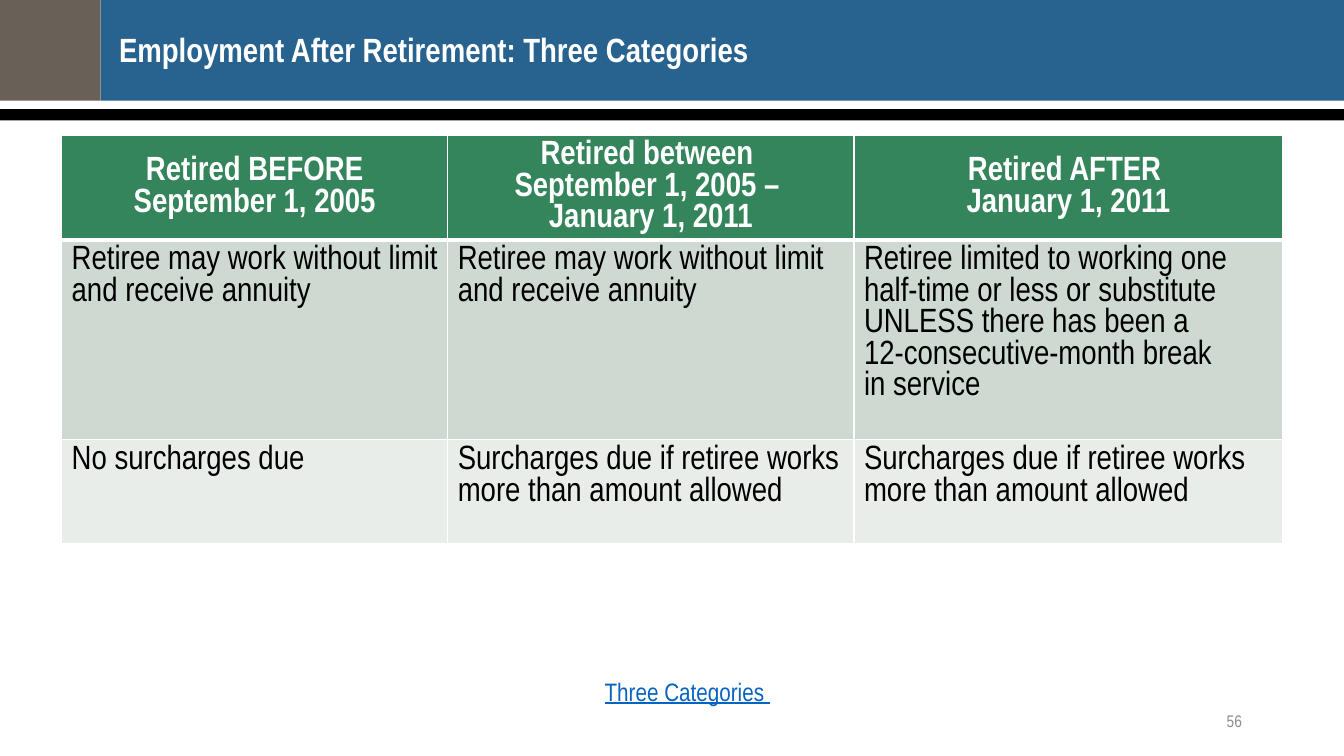
import pptx
import pptx.util
import pptx.dml.color
import pptx.enum.shapes
import pptx.enum.text
import pptx.oxml

Pt = pptx.util.Pt
ALIGN = pptx.enum.text.PP_ALIGN
ANCHOR = pptx.enum.text.MSO_ANCHOR

COLORS = {
    "blue": "28628E", "taupe": "696057", "black": "000000", "white": "FFFFFF",
    "green": "34855B", "sage": "CED9D2", "mist": "E8EDEA",
    "gray": "8C8C8C", "link": "0563C1",
}
FONT = "Arial Narrow"

TITLE = "Employment After Retirement: Three Categories"
BARS = [
    ("blue", 72, 0, 888, 72),
    ("taupe", 0, 0, 72, 72),
    ("black", 0, 78, 960, 8),
]
ROWS = [
    [
        ["Retired BEFORE September 1, 2005"],
        ["Retired between ", "September 1, 2005 – ", "January 1, 2011"],
        ["Retired AFTER ", "January 1, 2011"],
    ],
    [
        ["Retiree may work without limit and receive annuity"],
        ["Retiree may work without limit and receive annuity"],
        [
            "Retiree limited to working one half-time or less or substitute UNLESS there has been a",
            "12-consecutive-month break",
            "in service",
        ],
    ],
    [
        ["No surcharges due"],
        ["Surcharges due if retiree works more than amount allowed"],
        ["Surcharges due if retiree works more than amount allowed"],
    ],
]
TABLE_LEFT, TABLE_TOP = 44, 96.5
COLUMN_WIDTHS = [275.8, 290.2, 306.4]
ROW_HEIGHTS = [74.2, 142.8, 74.2]
ROW_FILLS = ["green", "sage", "mist"]
HEADER_FORMAT = {"size": 24, "color": "white", "bold": True}
BODY_FORMAT = {"size": 24, "color": "black", "bold": False}
TEXT_BOXES = [
    ("56", (678.2, 500.4, 216, 28.8), ALIGN.RIGHT, ANCHOR.MIDDLE,
     {"size": 12, "color": "gray"}),
    ("Three Categories ", (350.6, 479.5, 280.8, 28.8), ALIGN.CENTER, ANCHOR.TOP,
     {"size": 18, "color": "link", "underline": True}),
]


def rgb(name):
    return pptx.dml.color.RGBColor.from_string(COLORS[name])


def write_text(frame, lines, alignment, text_format):
    frame.word_wrap = True
    for index, line in enumerate(lines):
        paragraph = frame.paragraphs[0] if index == 0 else frame.add_paragraph()
        paragraph.alignment = alignment
        run = paragraph.add_run()
        run.text = line
        run.font.name = FONT
        for key, value in text_format.items():
            if key == "color":
                run.font.color.rgb = rgb(value)
            else:
                setattr(run.font, key, Pt(value) if key == "size" else value)


def add_border(cell, side, width):
    properties = cell._tc.get_or_add_tcPr()
    properties.append(pptx.oxml.parse_xml(
        f'<a:{side} xmlns:a="http://schemas.openxmlformats.org/drawingml/2006/main" '
        f'w="{Pt(width)}"><a:solidFill><a:srgbClr val="{COLORS["white"]}"/>'
        f'</a:solidFill></a:{side}>'))


def add_bars(slide):
    for color, *box in BARS:
        bar = slide.shapes.add_shape(
            pptx.enum.shapes.MSO_SHAPE.RECTANGLE, *map(Pt, box))
        bar.shadow.inherit = False
        bar.fill.solid()
        bar.fill.fore_color.rgb = rgb(color)
        bar.line.fill.background()


def place_title(slide):
    title = slide.shapes.title
    title.element.getparent().append(title.element)
    for name, value in zip(("left", "top", "width", "height"), (85, 23.8, 808.6, 40.3)):
        setattr(title, name, Pt(value))
    frame = title.text_frame
    for side in ("left", "top", "right", "bottom"):
        setattr(frame, f"margin_{side}", 0)
    frame.vertical_anchor = ANCHOR.TOP
    write_text(frame, [TITLE], ALIGN.LEFT, HEADER_FORMAT)
    frame.paragraphs[0].line_spacing = 0.9


def add_categories_table(slide):
    table = slide.shapes.add_table(
        len(ROWS), len(COLUMN_WIDTHS), Pt(TABLE_LEFT), Pt(TABLE_TOP),
        Pt(sum(COLUMN_WIDTHS)), Pt(sum(ROW_HEIGHTS))).table
    for column, width in zip(table.columns, COLUMN_WIDTHS):
        column.width = Pt(width)
    for row_index, row in enumerate(ROWS):
        table.rows[row_index].height = Pt(ROW_HEIGHTS[row_index])
        header = row_index == 0
        for column_index, lines in enumerate(row):
            cell = table.cell(row_index, column_index)
            for side in ("lnL", "lnR", "lnT", "lnB"):
                thick = (side, row_index) in (("lnB", 0), ("lnT", 1))
                add_border(cell, side, 3 if thick else 1)
            cell.fill.solid()
            cell.fill.fore_color.rgb = rgb(ROW_FILLS[row_index])
            cell.vertical_anchor = ANCHOR.MIDDLE if header else ANCHOR.TOP
            write_text(cell.text_frame, lines,
                       ALIGN.CENTER if header else ALIGN.LEFT,
                       HEADER_FORMAT if header else BODY_FORMAT)


def add_text_boxes(slide):
    for text, box, alignment, anchor, text_format in TEXT_BOXES:
        frame = slide.shapes.add_textbox(*map(Pt, box)).text_frame
        frame.vertical_anchor = anchor
        write_text(frame, [text], alignment, text_format)


def main():
    presentation = pptx.Presentation()
    presentation.slide_width, presentation.slide_height = Pt(960), Pt(540)
    slide = presentation.slides.add_slide(presentation.slide_layouts[5])
    add_bars(slide)
    place_title(slide)
    add_categories_table(slide)
    add_text_boxes(slide)
    presentation.save("out.pptx")


if __name__ == "__main__":
    main()
